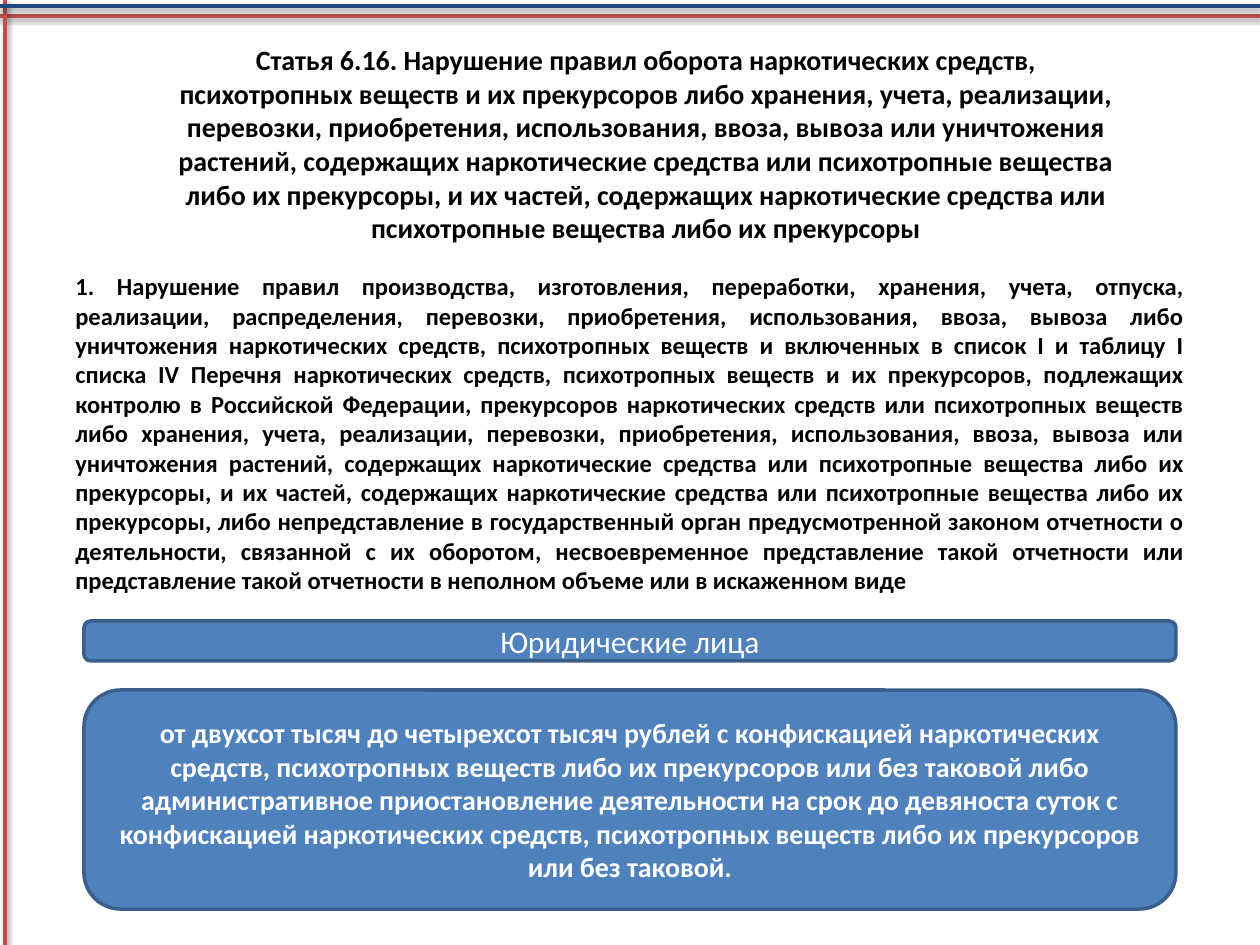
from dataclasses import dataclass

from lxml import etree
from pptx import Presentation
from pptx import util as u
from pptx.dml.color import RGBColor
from pptx.enum import shapes, text
from pptx.oxml.ns import qn

PX = 914400 / 126
WIDE, HIGH = 1260, 945


@dataclass(frozen=True)
class Theme:
    font: str = "Calibri"
    ink: str = "000000"
    paper: str = "FFFFFF"
    fill: str = "4F81BD"
    edge: str = "3A5F8C"
    red: str = "C0504D"
    navy: str = "1F497D"
    title: int = 16
    body: int = 14
    label: int = 18
    line: int = 2


THEME = Theme()

TITLE = (
    "Статья 6.16. Нарушение правил оборота наркотических средств, "
    "психотропных веществ и их прекурсоров либо хранения, учета, реализации, "
    "перевозки, приобретения, использования, ввоза, вывоза или уничтожения "
    "растений, содержащих наркотические средства или психотропные вещества "
    "либо их прекурсоры, и их частей, содержащих наркотические средства или "
    "психотропные вещества либо их прекурсоры"
)
BODY = " ".join((
    "1. Нарушение правил производства, изготовления, переработки, хранения,",
    "учета, отпуска, реализации, распределения, перевозки, приобретения,",
    "использования, ввоза, вывоза либо уничтожения наркотических средств,",
    "психотропных веществ и включенных в список I и таблицу I списка",
    "IV Перечня наркотических средств, психотропных веществ и их прекурсоров,",
    "подлежащих контролю в Российской Федерации, прекурсоров наркотических",
    "средств или психотропных веществ либо хранения, учета, реализации,",
    "перевозки, приобретения, использования, ввоза, вывоза или уничтожения",
    "растений, содержащих наркотические средства или психотропные вещества",
    "либо их прекурсоры, и их частей, содержащих наркотические средства или",
    "психотропные вещества либо их прекурсоры, либо непредставление в",
    "государственный орган предусмотренной законом отчетности о",
    "деятельности, связанной с их оборотом, несвоевременное представление",
    "такой отчетности или представление такой отчетности в неполном объеме",
    "или в искаженном виде",
))
LABEL = "Юридические лица"
FINE = (
    "от двухсот тысяч до четырехсот тысяч рублей с конфискацией наркотических "
    "средств, психотропных веществ либо их прекурсоров или без таковой либо "
    "административное приостановление деятельности на срок до девяноста суток "
    "с конфискацией наркотических средств, психотропных веществ либо их "
    "прекурсоров или без таковой."
)


def emu(*sizes):
    return [round(size * PX) for size in sizes]


def rgb(code):
    return RGBColor.from_string(code)


def write(shape, words, size, color, bold=True,
          align=text.PP_ALIGN.CENTER, anchor=text.MSO_ANCHOR.MIDDLE):
    frame = shape.text_frame
    frame.word_wrap = True
    frame.vertical_anchor = anchor
    para = frame.paragraphs[0]
    para.text = words
    para.alignment = align
    font = para.font
    font.name, font.size, font.bold = THEME.font, u.Pt(size), bold
    font.color.rgb = rgb(color)


def shade(line):
    """Give a connector a soft shadow that falls straight down."""
    list_ = etree.SubElement(line._element.spPr, qn("a:effectLst"))
    drop = etree.SubElement(list_, qn("a:outerShdw"), blurRad="40000",
                            dist="20000", dir="5400000", rotWithShape="0")
    tint = etree.SubElement(drop, qn("a:srgbClr"), val=THEME.ink)
    etree.SubElement(tint, qn("a:alpha"), val="38000")


def frame_lines(slide, box):
    """Draw the rules along the top and left edges of the box."""
    x, y, w, h = box
    rules = (
        (x + w, y + 16, x, y + 16, THEME.red),
        (x + 5, y, x + 5, y + h, THEME.red),
        (x, y + 6, x + w, y + 6, THEME.navy),
    )
    for *ends, color in rules:
        line = slide.shapes.add_connector(
            shapes.MSO_CONNECTOR.STRAIGHT, *emu(*ends))
        line.line.color.rgb = rgb(color)
        line.line.width = u.Pt(THEME.line)
        shade(line)


def article(slide, box):
    """Place the heading and, below it, the justified clause."""
    x, y, w, h = box
    head = slide.shapes.add_textbox(*emu(x + 91, y, 984, 197))
    write(head, TITLE, THEME.title, THEME.ink)
    clause = slide.shapes.add_textbox(*emu(x, y + 220, w, h - 220))
    write(clause, BODY, THEME.body, THEME.ink,
          align=text.PP_ALIGN.JUSTIFY, anchor=text.MSO_ANCHOR.TOP)


def panel(slide, box, words, size, bold):
    shape = slide.shapes.add_shape(
        shapes.MSO_SHAPE.ROUNDED_RECTANGLE, *emu(*box))
    shape.shadow.inherit = False
    shape.fill.solid()
    shape.fill.fore_color.rgb = rgb(THEME.fill)
    shape.line.color.rgb = rgb(THEME.edge)
    shape.line.width = u.Pt(THEME.line)
    write(shape, words, size, THEME.paper, bold)


def penalty(slide, box):
    """Place the label bar and the fine panel under it."""
    x, y, w, h = box
    panel(slide, (x, y, w, 40), LABEL, THEME.label, False)
    panel(slide, (x, y + 69, w, h - 69), FINE, THEME.title, True)


def main():
    deck = Presentation()
    deck.slide_width, deck.slide_height = emu(WIDE, HIGH)
    slide = deck.slides.add_slide(deck.slide_layouts[6])
    frame_lines(slide, (0, 0, WIDE, HIGH))
    article(slide, (63, 45, 1134, 800))
    penalty(slide, (84, 621, 1092, 288))
    deck.save("out.pptx")


if __name__ == "__main__":
    main()
